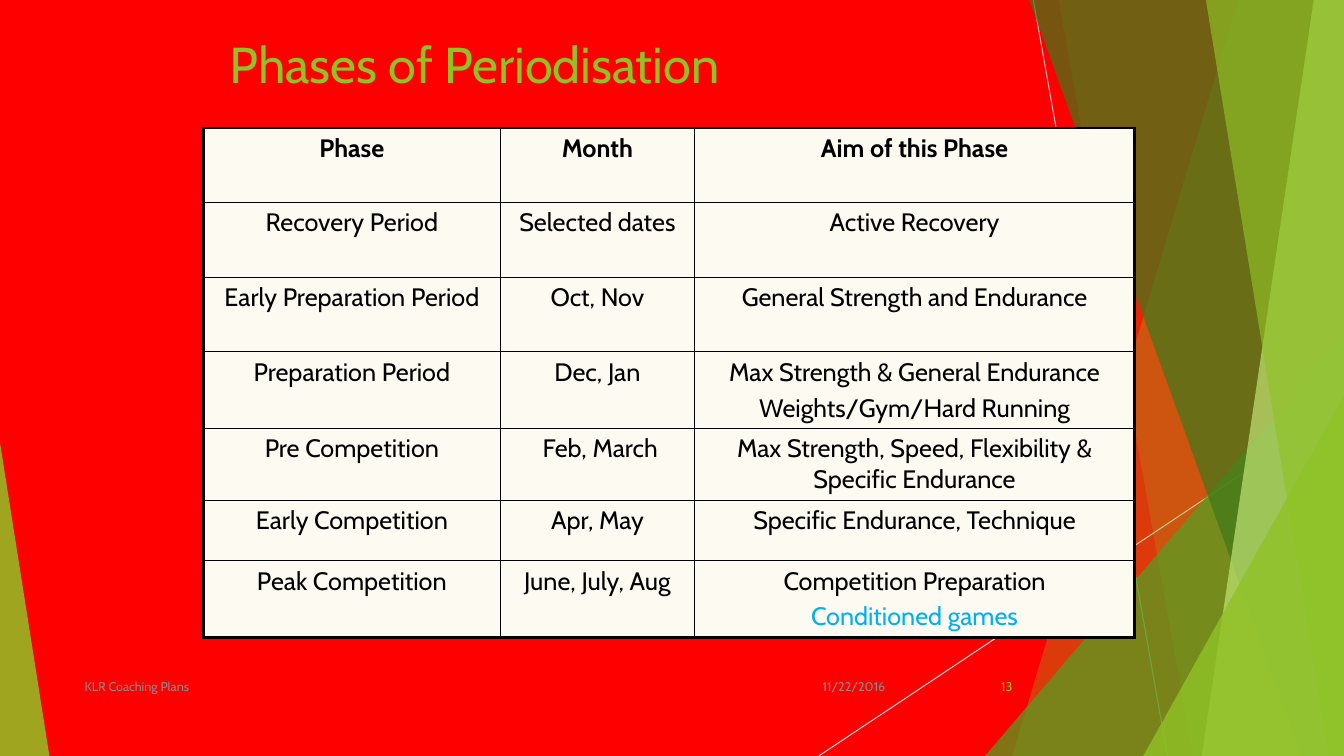
from dataclasses import dataclass
from lxml.etree import SubElement
from pptx import Presentation
from pptx.dml.color import RGBColor
from pptx.enum.shapes import MSO_CONNECTOR, MSO_SHAPE
from pptx.enum.text import MSO_ANCHOR, PP_ALIGN
from pptx.oxml.ns import qn
from pptx.util import Inches, Pt


@dataclass(frozen=True)
class Theme:
    font: str = "Cabin"
    back: str = "FF0000"
    green: str = "90C226"
    mid_green: str = "54A021"
    dark_green: str = "3F7819"
    pale_green: str = "C0E474"
    cream: str = "FDFBF1"
    ink: str = "000000"
    blue: str = "00B0F0"
    grey: str = "8C8C8C"
    title_size: float = 36
    cell_size: float = 18
    footer_size: float = 9
    cell_gap: float = 3.6
    frame: float = 2.25
    rule: float = 1
    hairline: float = 0.75


T = Theme()

TITLE = "Phases of Periodisation"
TITLE_BOX = (16.35, 3.73, 63.77, 12.67)
PHASES = [
    ("Phase", "Month", "Aim of this Phase"),
    ("Recovery Period", "Selected dates", "Active Recovery"),
    ("Early Preparation Period", "Oct, Nov", "General Strength and Endurance"),
    ("Preparation Period", "Dec, Jan",
     "Max Strength & General Endurance\nWeights/Gym/Hard Running"),
    ("Pre Competition", " Feb, March",
     "Max Strength, Speed, Flexibility & Specific Endurance"),
    ("Early Competition", "Apr, May", "Specific Endurance, Technique"),
    ("Peak Competition", "June, July, Aug",
     "Competition Preparation\nConditioned games"),
]
HIGHLIGHT = "Conditioned games"
TABLE_AT = (15.15, 16.93)
COLUMNS = (22.06, 14.48, 32.71)
ROWS = (9.87, 9.87, 9.87, 10.1, 9.5, 8, 10.1)

FOOTER_TOP, FOOTER_HEIGHT = 88.13, 5.33
FOOTERS = [
    ("11/22/2016", 59.11, 7.5, PP_ALIGN.RIGHT, T.grey),
    ("KLR Coaching Plans", 5.55, 51.69, PP_ALIGN.LEFT, T.grey),
    ("13", 70.44, 5.63, PP_ALIGN.RIGHT, T.green),
]

LINES = [
    (76.89, 0, 86.87, 100, "BFBFBF"),
    (100, 53.73, 60.92, 100, "D9D9D9"),
]
BAND, TRIANGLE = "band", "triangle"
FACETS = [
    (BAND, 92.12, 75.32, T.green, 30),
    (BAND, 78.77, 88.75, T.green, 20),
    (TRIANGLE, (73.29, 100), 44.4, T.mid_green, 72),
    (BAND, 76.59, 96.85, T.dark_green, 70),
    (BAND, 97.75, 89.42, T.pale_green, 70),
    (BAND, 89.72, 98.87, T.green, 65),
    (TRIANGLE, (85.07, 100), 52.4, T.green, 80),
    (TRIANGLE, (3.68, 0), 58.53, T.green, 85),
]

prs = Presentation()
prs.slide_width, prs.slide_height = Inches(13.33), Inches(7.5)


def across(share):
    return round(prs.slide_width * share / 100)


def down(share):
    return round(prs.slide_height * share / 100)


def box(left, top, width, height):
    return across(left), down(top), across(width), down(height)


def style(p, size, colour, align, bold=False):
    p.alignment = align
    for r in p.runs:
        r.font.name, r.font.size, r.font.bold = T.font, Pt(size), bold
        r.font.color.rgb = RGBColor.from_string(colour)


def add_line(s, x1, y1, x2, y2, colour):
    line = s.shapes.add_connector(
        MSO_CONNECTOR.STRAIGHT, across(x1), down(y1), across(x2), down(y2))
    line.line.color.rgb = RGBColor.from_string(colour)
    line.line.width = Pt(T.hairline)
    SubElement(line.element.spPr, qn("a:effectLst"))


def add_band(s, top_x, bottom_x):
    fb = s.shapes.build_freeform(across(top_x), 0)
    fb.add_line_segments([(across(x), down(y)) for x, y in
                          ((100, 0), (100, 100), (bottom_x, 100))])
    return fb.convert_to_shape()


def add_triangle(s, span, top):
    foot, apex = span
    left, right = sorted(span)
    sp = s.shapes.add_shape(MSO_SHAPE.ISOSCELES_TRIANGLE,
                            *box(left, top, right - left, 100 - top))
    sp.adjustments[0] = 1 if apex > foot else 0
    return sp


def add_facet(s, kind, first, second, colour, opacity):
    sp = {BAND: add_band, TRIANGLE: add_triangle}[kind](s, first, second)
    sp.shadow.inherit = False
    sp.line.fill.background()
    sp.fill.solid()
    sp.fill.fore_color.rgb = RGBColor.from_string(colour)
    clr = sp.element.spPr.find(qn("a:solidFill")).find(qn("a:srgbClr"))
    SubElement(clr, qn("a:alpha"), val=str(opacity * 1000))


def add_title(s):
    title = s.shapes.title
    title.element.getparent().append(title.element)
    title.left, title.top, title.width, title.height = box(*TITLE_BOX)
    tf = title.text_frame
    tf.text = TITLE
    tf.vertical_anchor = MSO_ANCHOR.TOP
    style(tf.paragraphs[0], T.title_size, T.green, PP_ALIGN.LEFT)


def set_borders(cell, row, col):
    outer = {"lnL": col == 0, "lnR": col == len(COLUMNS) - 1,
             "lnT": row == 0, "lnB": row == len(ROWS) - 1}
    tc_pr = cell._tc.get_or_add_tcPr()
    for side, is_outer in outer.items():
        ln = SubElement(tc_pr, qn(f"a:{side}"),
                        w=str(Pt(T.frame if is_outer else T.rule)))
        SubElement(SubElement(ln, qn("a:solidFill")), qn("a:srgbClr"), val=T.ink)


def add_phases(s):
    table = s.shapes.add_table(
        len(ROWS), len(COLUMNS), *box(*TABLE_AT, sum(COLUMNS), sum(ROWS))).table
    table.first_row = table.horz_banding = False
    for column, share in zip(table.columns, COLUMNS):
        column.width = across(share)
    for i, (row, share) in enumerate(zip(table.rows, ROWS)):
        row.height = down(share)
        for j, cell in enumerate(row.cells):
            cell.text_frame.text = PHASES[i][j]
            set_borders(cell, i, j)
            cell.fill.solid()
            cell.fill.fore_color.rgb = RGBColor.from_string(T.cream)
            for p in cell.text_frame.paragraphs:
                p.space_before = Pt(T.cell_gap)
                colour = T.blue if p.text == HIGHLIGHT else T.ink
                style(p, T.cell_size, colour, PP_ALIGN.CENTER, bold=i == 0)


def add_footer(s, text, left, width, align, colour):
    tf = s.shapes.add_textbox(
        *box(left, FOOTER_TOP, width, FOOTER_HEIGHT)).text_frame
    tf.word_wrap = True
    tf.vertical_anchor = MSO_ANCHOR.MIDDLE
    tf.text = text
    style(tf.paragraphs[0], T.footer_size, colour, align)


def main():
    s = prs.slides.add_slide(prs.slide_layouts[5])
    s.background.fill.solid()
    s.background.fill.fore_color.rgb = RGBColor.from_string(T.back)
    for line in LINES:
        add_line(s, *line)
    for facet in FACETS:
        add_facet(s, *facet)
    add_title(s)
    add_phases(s)
    for footer in FOOTERS:
        add_footer(s, *footer)
    prs.save("out.pptx")


if __name__ == "__main__":
    main()
